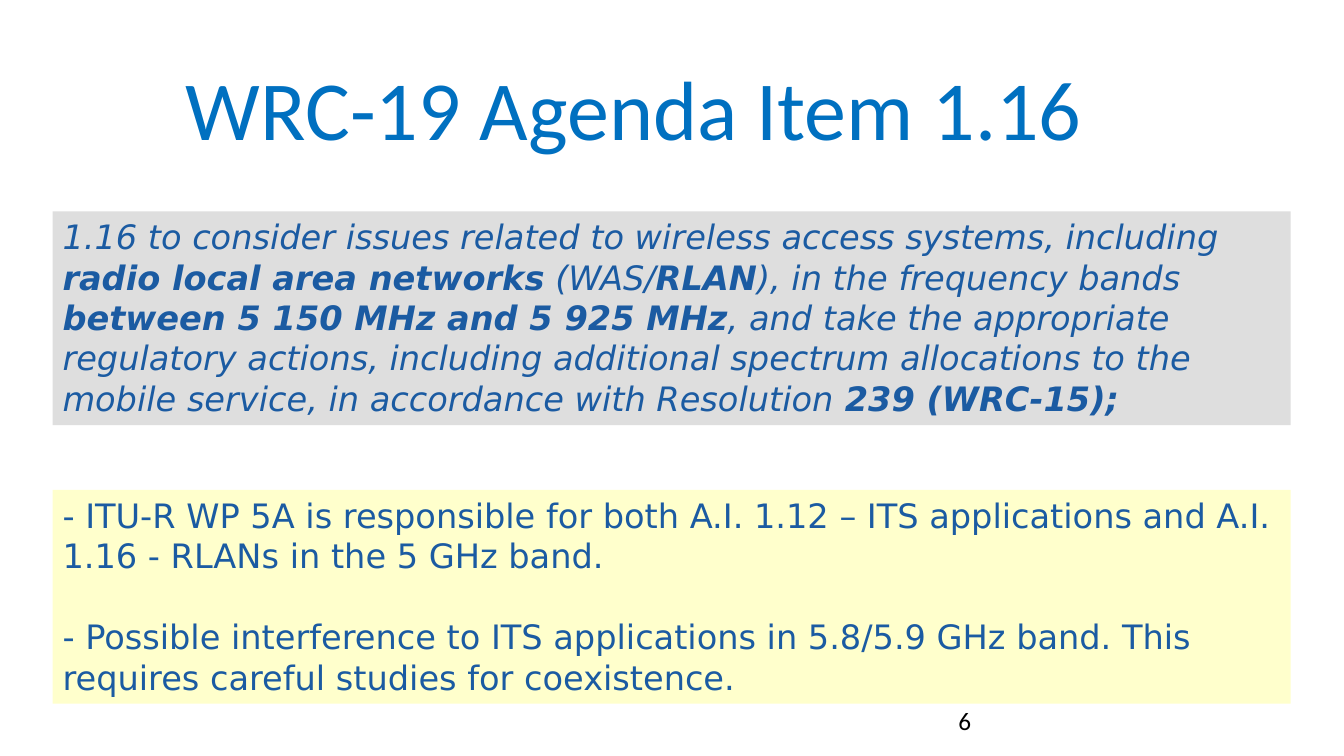
from dataclasses import dataclass

from pptx import Presentation
from pptx.dml.color import RGBColor
from pptx.enum import shapes, text
from pptx.util import Pt


@dataclass(frozen=True)
class Theme:
    head: str = "Calibri"
    body: str = "DejaVu Sans"
    title: str = "0070C0"
    ink: str = "1B5BA2"
    black: str = "000000"
    grey: str = "DEDEDE"
    cream: str = "FFFFCC"
    big: int = 60
    mid: int = 24
    small: int = 18
    gap: int = 29


class Deck:
    def __init__(self, theme):
        self.theme = theme
        self.file = Presentation()
        self.file.slide_width, self.file.slide_height = Pt(960), Pt(540)
        self.slide = self.file.slides.add_slide(self.file.slide_layouts[6])

    def run(self, para, words, face, size, color, bold=False, italic=False):
        run = para.add_run()
        run.text = words
        font = run.font
        font.name, font.size = face, Pt(size)
        font.bold, font.italic = bold, italic
        font.color.rgb = RGBColor.from_string(color)

    def label(self, spot, words, size, color, align=text.PP_ALIGN.LEFT,
              anchor=text.MSO_ANCHOR.TOP, lines=1.0):
        frame = self.slide.shapes.add_textbox(*map(Pt, spot)).text_frame
        frame.word_wrap = True
        frame.vertical_anchor = anchor
        para = frame.paragraphs[0]
        para.alignment, para.line_spacing = align, lines
        self.run(para, words, self.theme.head, size, color)

    def panel(self, top, fill, paras, italic=False):
        """Draw a full-width filled box; each paragraph is a list of (words, bold)."""
        look = self.theme
        box = self.slide.shapes.add_shape(
            shapes.MSO_SHAPE.RECTANGLE, Pt(37.6), Pt(top), Pt(884.4), Pt(152.7))
        box.shadow.inherit = False
        box.fill.solid()
        box.fill.fore_color.rgb = RGBColor.from_string(fill)
        box.line.fill.background()
        frame = box.text_frame
        frame.word_wrap = True
        frame.auto_size = text.MSO_AUTO_SIZE.SHAPE_TO_FIT_TEXT
        frame.vertical_anchor = text.MSO_ANCHOR.TOP
        for i, runs in enumerate(paras):
            para = frame.add_paragraph() if i else frame.paragraphs[0]
            para.alignment = text.PP_ALIGN.LEFT
            if i:
                para.space_before = Pt(look.gap)
            for words, bold in runs:
                self.run(para, words, look.body, look.mid, look.ink, bold, italic)


def main():
    look = Theme()
    deck = Deck(look)
    deck.label((677.5, 500.4, 216, 28.8), "6", look.small, look.black)
    deck.label((20.9, 25.2, 864, 90), "WRC-19 Agenda Item 1.16", look.big,
               look.title, text.PP_ALIGN.CENTER, text.MSO_ANCHOR.BOTTOM, 0.8)
    deck.panel(151, look.grey, [[
        ("1.16 to consider issues related to wireless access systems, including ", False),
        ("radio local area networks", True),
        (" (WAS/", False),
        ("RLAN", True),
        ("), in the frequency bands ", False),
        ("between 5 150 MHz and 5 925 MHz", True),
        (", and take the appropriate regulatory actions, including additional "
         "spectrum allocations to the mobile service, in accordance with "
         "Resolution ", False),
        ("239 (WRC-15);", True),
    ]], italic=True)
    deck.panel(350, look.cream, [
        [("- ITU-R WP 5A is responsible for both A.I. 1.12 – ITS applications "
          "and A.I. 1.16 - RLANs in the 5 GHz band.", False)],
        [("- Possible interference to ITS applications in 5.8/5.9 GHz band. "
          "This requires careful studies for coexistence.", False)],
    ])
    deck.file.save("out.pptx")


if __name__ == "__main__":
    main()
